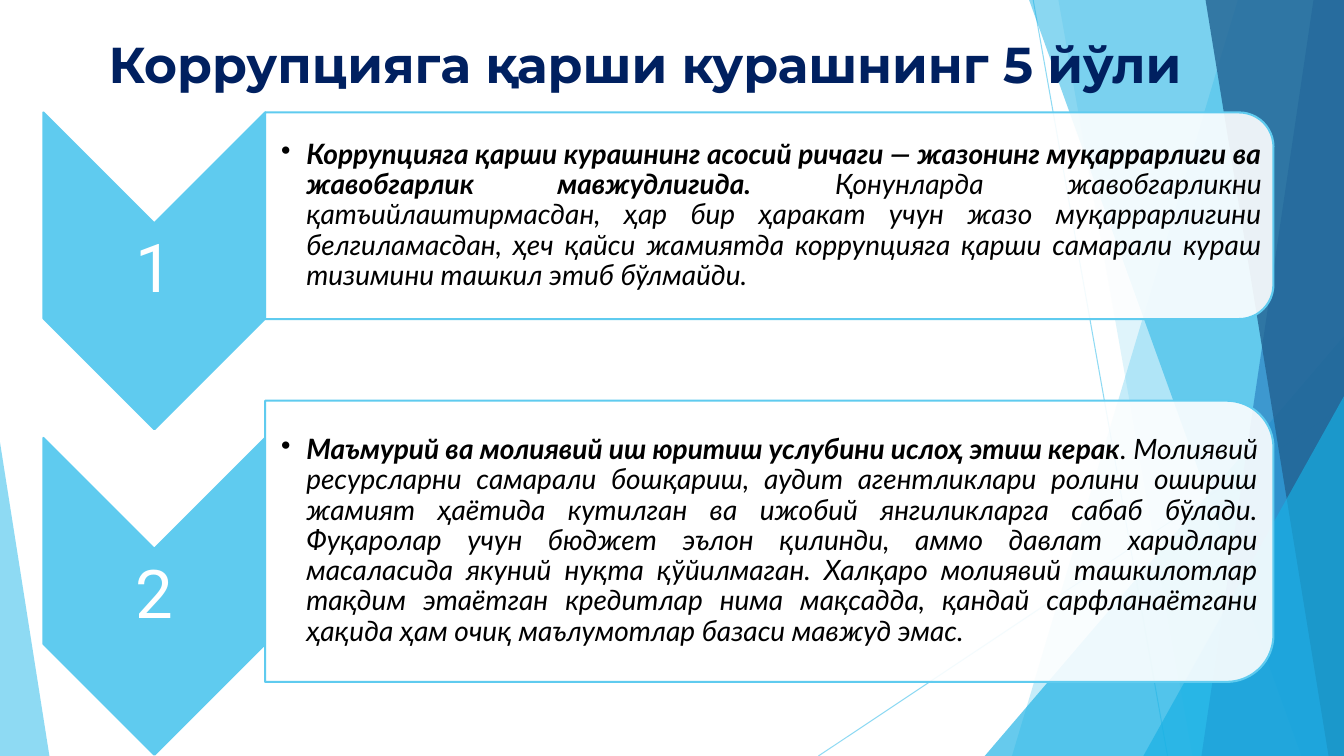
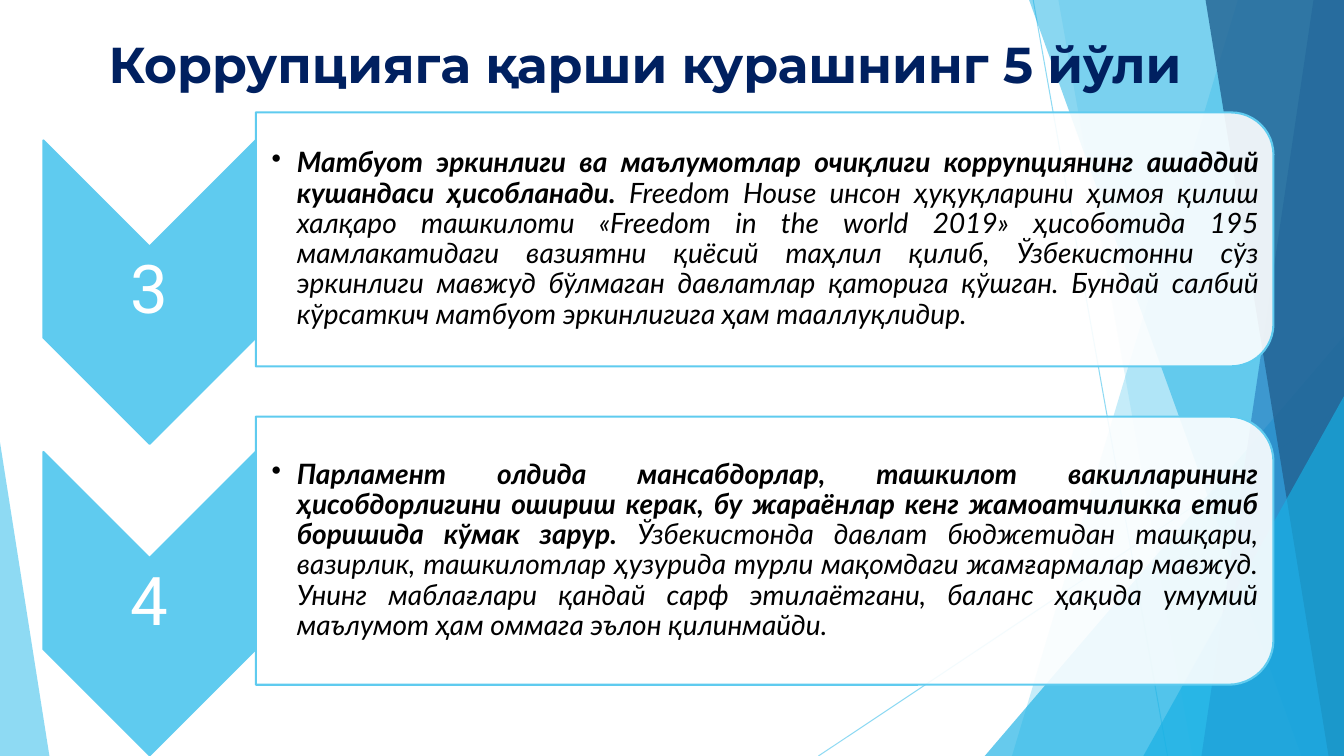
from dataclasses import dataclass

from lxml.etree import SubElement
from pptx import Presentation
from pptx.dml.color import RGBColor
from pptx.enum.shapes import MSO_CONNECTOR, MSO_SHAPE as SHAPE
from pptx.enum.text import MSO_ANCHOR as ANCHOR, PP_ALIGN as ALIGN
from pptx.oxml.ns import qn
from pptx.util import Pt

W, H = 960, 540
COLORS = {
    "sky": "5FCBEF",
    "azure": "17B0E4",
    "blue": "2E83C3",
    "deep": "226292",
    "navy": "002060",
    "white": "FFFFFF",
    "black": "000000",
}
TITLE = "Коррупцияга қарши курашнинг 5 йўли"
TITLE_FONT = {"name": "Montserrat", "size": Pt(36), "bold": True}
NUMBER_FONT = {"name": "Roboto", "size": Pt(48)}
LEAD_FONT = {"name": "Lato", "size": Pt(20), "italic": True, "bold": True}
REST_FONT = {**LEAD_FONT, "bold": False}

CHEVRON_LEFT = 31
CHEVRON_RATIO = 10 / 7
PANEL_RIGHT = 909.6
CORNER_INSET = 0.05  # share of the panel height


@dataclass(frozen=True)
class Box:
    left: float
    top: float
    width: float
    height: float

    def emu(self) -> tuple:
        return Pt(self.left), Pt(self.top), Pt(self.width), Pt(self.height)


@dataclass(frozen=True)
class Band:
    """Area from a slanted left edge to the right side of the slide."""
    top_x: float
    bottom_x: float
    color: str
    alpha: int


@dataclass(frozen=True)
class Wedge:
    box: Box
    apex: float
    color: str
    alpha: int


@dataclass(frozen=True)
class Step:
    number: int
    chevron_top: float
    panel_top: float
    panel_height: float
    lead: str
    rest: str


@dataclass(frozen=True)
class Page:
    chevron_width: float
    steps: tuple


RAYS = [((738, 0), (834, H)), ((W, 290), (584.6, H))]
BACKDROP = [
    Band(884.2, 722.9, "sky", 36),
    Band(756, 851.8, "sky", 20),
    Wedge(Box(703.4, 240, 256.6, 300), 1, "azure", 66),
    Band(735.1, 929.5, "azure", 50),
    Band(938.2, 858.2, "blue", 70),
    Band(861.1, 949, "deep", 80),
    Wedge(Box(816.7, 283, 143.3, 257), 1, "azure", 66),
    Wedge(Box(0, 316, 35.3, 224), 0, "sky", 70),
]

PAGES = [
    Page(158.4, (
        Step(1, 80.3, 80.3, 147.6,
             "Коррупцияга қарши курашнинг асосий ричаги — жазонинг муқаррарлиги ва "
             "жавобгарлик мавжудлигида.",
             " Қонунларда жавобгарликни қатъийлаштирмасдан, ҳар бир ҳаракат учун жазо "
             "муқаррарлигини белгиламасдан, ҳеч қайси жамиятда коррупцияга қарши самарали "
             "кураш тизимини ташкил этиб бўлмайди."),
        Step(2, 312.8, 286.2, 200.9,
             "Маъмурий ва молиявий иш юритиш услубини ислоҳ этиш керак",
             ". Молиявий ресурсларни самарали бошқариш, аудит агентликлари ролини ошириш "
             "жамият ҳаётида кутилган ва ижобий янгиликларга сабаб бўлади. Фуқаролар учун "
             "бюджет эълон қилинди, аммо давлат харидлари масаласида якуний нуқта "
             "қўйилмаган. Халқаро молиявий ташкилотлар тақдим этаётган кредитлар нима "
             "мақсадда, қандай сарфланаётгани ҳақида ҳам очиқ маълумотлар базаси мавжуд "
             "эмас."),
    )),
    Page(151.7, (
        Step(3, 100.3, 80.3, 181.4,
             "Матбуот эркинлиги ва маълумотлар очиқлиги коррупциянинг ашаддий кушандаси "
             "ҳисобланади.",
             " Freedom House инсон ҳуқуқларини ҳимоя қилиш халқаро ташкилоти «Freedom in "
             "the world 2019» ҳисоботида 195 мамлакатидаги вазиятни қиёсий таҳлил қилиб, "
             "Ўзбекистонни сўз эркинлиги мавжуд бўлмаган давлатлар қаторига қўшган. Бундай "
             "салбий кўрсаткич матбуот эркинлигига ҳам тааллуқлидир."),
        Step(4, 322.8, 297.6, 191.5,
             "Парламент олдида мансабдорлар, ташкилот вакилларининг ҳисобдорлигини ошириш "
             "керак, бу жараёнлар кенг жамоатчиликка етиб боришида кўмак зарур.",
             " Ўзбекистонда давлат бюджетидан ташқари, вазирлик, ташкилотлар ҳузурида турли "
             "мақомдаги жамғармалар мавжуд. Унинг маблағлари қандай сарф этилаётгани, баланс "
             "ҳақида умумий маълумот ҳам оммага эълон қилинмайди."),
    )),
]


def rgb(color: str) -> RGBColor:
    return RGBColor.from_string(COLORS[color])


def set_alpha(element, percent: int) -> None:
    """Make every colour set so far inside the element see-through."""
    for clr in element.iter(qn("a:srgbClr")):
        SubElement(clr, qn("a:alpha"), val=str(percent * 1000))


def paint(sp, fill: str, alpha: int = 100, line: str = "") -> None:
    sp.shadow.inherit = False
    sp.fill.solid()
    sp.fill.fore_color.rgb = rgb(fill)
    if alpha < 100:
        set_alpha(sp._element.spPr, alpha)
    if line:
        sp.line.color.rgb = rgb(line)
        sp.line.width = Pt(1.5)
    else:
        sp.line.fill.background()


def add_ray(s, start: tuple, end: tuple) -> None:
    ray = s.shapes.add_connector(
        MSO_CONNECTOR.STRAIGHT, *(Pt(v) for v in (*start, *end)))
    ray.line.color.rgb = rgb("sky")
    ray.line.width = Pt(0.75)
    set_alpha(ray._element.spPr, 70)
    SubElement(ray._element.spPr, qn("a:effectLst"))


def add_backdrop(s) -> None:
    for start, end in RAYS:
        add_ray(s, start, end)
    for part in BACKDROP:
        if isinstance(part, Band):
            outline = s.shapes.build_freeform(Pt(part.top_x), 0)
            corners = [(W, 0), (W, H), (part.bottom_x, H)]
            outline.add_line_segments([(Pt(x), Pt(y)) for x, y in corners])
            sp = outline.convert_to_shape()
        else:
            sp = s.shapes.add_shape(SHAPE.ISOSCELES_TRIANGLE, *part.box.emu())
            sp.adjustments[0] = part.apex
        paint(sp, part.color, part.alpha)


def add_text(s, box: Box, runs: list, color: str, align: ALIGN, spacing: float,
             anchor: ANCHOR = ANCHOR.MIDDLE, margins: tuple = (2, 2, 2, 2),
             bullet: bool = False) -> None:
    tf = s.shapes.add_textbox(*box.emu()).text_frame
    tf.word_wrap = True
    tf.vertical_anchor = anchor
    for side, margin in zip(("left", "top", "right", "bottom"), margins):
        setattr(tf, f"margin_{side}", Pt(margin))
    p = tf.paragraphs[0]
    p.alignment = align
    p.line_spacing = spacing
    if bullet:
        pPr = p._p.get_or_add_pPr()
        pPr.set("marL", str(Pt(18)))
        pPr.set("indent", str(Pt(-18)))
        SubElement(pPr, qn("a:buChar"), char="•")
    for text, style in runs:
        r = p.add_run()
        r.text = text
        r.font.color.rgb = rgb(color)
        for key, value in style.items():
            setattr(r.font, key, value)


def add_turned(s, kind: SHAPE, box: Box):
    """Add a shape turned a quarter clockwise so that it covers the box."""
    shift = (box.width - box.height) / 2
    frame = Box(box.left + shift, box.top - shift, box.height, box.width)
    sp = s.shapes.add_shape(kind, *frame.emu())
    sp.rotation = 90
    return sp


def add_step(s, step: Step, width: float) -> None:
    height = width * CHEVRON_RATIO
    chevron = Box(CHEVRON_LEFT, step.chevron_top, width, height)
    paint(add_turned(s, SHAPE.CHEVRON, chevron), "sky", line="sky")
    label = Box(CHEVRON_LEFT, step.chevron_top + width / 2, width, height - width)
    add_text(s, label, [(str(step.number), NUMBER_FONT)], "white", ALIGN.CENTER, 0.9)

    left = CHEVRON_LEFT + width
    panel = Box(left, step.panel_top, PANEL_RIGHT - left, step.panel_height)
    paint(add_turned(s, SHAPE.ROUND_2_SAME_RECTANGLE, panel), "white", 90, "sky")
    inset = panel.height * CORNER_INSET
    body = Box(left, panel.top + inset, panel.width - inset, panel.height - 2 * inset)
    add_text(s, body, [(step.lead, LEAD_FONT), (step.rest, REST_FONT)], "black",
             ALIGN.JUSTIFY, 0.9, margins=(11.4, 0.9, 0.9, 0.9), bullet=True)


def main() -> None:
    prs = Presentation()
    prs.slide_width, prs.slide_height = Pt(W), Pt(H)
    for page in PAGES:
        s = prs.slides.add_slide(prs.slide_layouts[6])
        add_backdrop(s)
        add_text(s, Box(0, 17.3, 921.6, 80.6), [(TITLE, TITLE_FONT)], "navy",
                 ALIGN.CENTER, 1.07, ANCHOR.TOP, (7.2, 3.6, 7.2, 3.6))
        for step in page.steps:
            add_step(s, step, page.chevron_width)
    prs.save("out.pptx")


if __name__ == "__main__":
    main()
